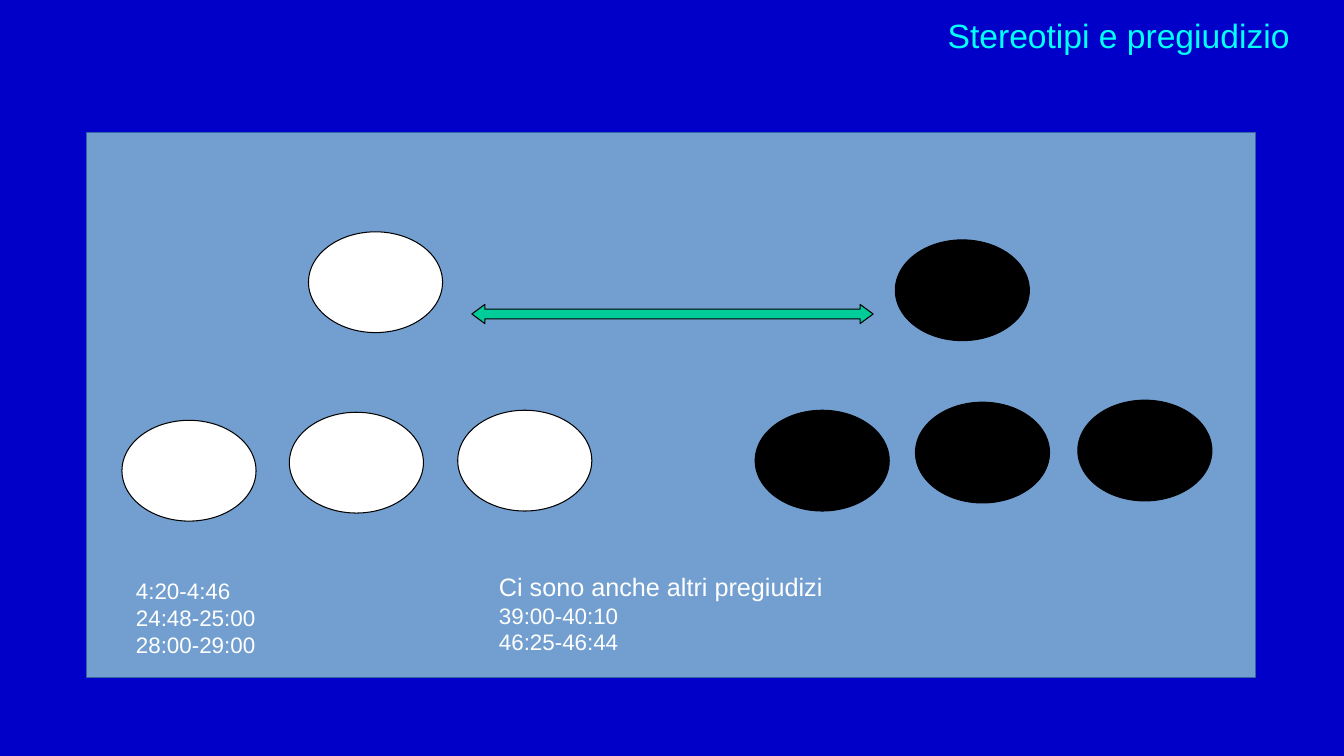
from dataclasses import dataclass

from pptx import Presentation
from pptx import util as u
from pptx.dml import color
from pptx.enum import shapes, text


@dataclass(frozen=True)
class Theme:
    """Colours, font and type sizes of the slide."""
    background: str = "0000C8"
    heading: str = "00FFFF"
    panel: str = "729FCF"
    panel_edge: str = "3465A4"
    arrow: str = "00CC99"
    white: str = "FFFFFF"
    black: str = "000000"
    font: str = "Arial"
    title_size: int = 24
    lead_size: int = 18
    note_size: int = 16


THEME = Theme()
PANEL = (0.86, 1.31, 11.59, 5.41)
PERSON = (1.33, 1)


def rgb(value):
    """Turn a hex string into a colour."""
    return color.RGBColor.from_string(value)


def add_figure(slide, kind, box, fill, edge=THEME.black):
    """Draw one filled, thinly outlined preset shape."""
    figure = slide.shapes.add_shape(kind, *map(u.Inches, box))
    figure.shadow.inherit = False
    figure.fill.solid()
    figure.fill.fore_color.rgb = rgb(fill)
    figure.line.color.rgb = rgb(edge)
    figure.line.width = u.Pt(0.75)
    return figure


def add_run(paragraph, words, size, ink):
    """Append one formatted run to a paragraph."""
    run = paragraph.add_run()
    run.text = words
    run.font.name = THEME.font
    run.font.size = u.Pt(size)
    run.font.color.rgb = rgb(ink)


def place_title(slide, box, words):
    """Move the title placeholder into its box, aligned right."""
    title = slide.shapes.title
    title.left, title.top, title.width, title.height = map(u.Inches, box)
    frame = title.text_frame
    frame.auto_size = text.MSO_AUTO_SIZE.NONE
    frame.vertical_anchor = text.MSO_ANCHOR.MIDDLE
    frame.paragraphs[0].alignment = text.PP_ALIGN.RIGHT
    add_run(frame.paragraphs[0], words, THEME.title_size, THEME.heading)


def add_group(slide, box, people, fill):
    """Draw the members of one social group at offsets within the box."""
    left, top = box[:2]
    for across, down in people:
        place = (left + across, top + down, *PERSON)
        add_figure(slide, shapes.MSO_SHAPE.OVAL, place, fill)


def add_relation(slide, box):
    """Draw the double arrow between the two groups."""
    arrow = add_figure(slide, shapes.MSO_SHAPE.LEFT_RIGHT_ARROW, box, THEME.arrow)
    arrow.adjustments[0] = 0.5
    arrow.adjustments[1] = 0.68


def add_notes(slide, box, lines):
    """Write a block of (words, size) lines."""
    frame = slide.shapes.add_textbox(*map(u.Inches, box)).text_frame
    frame.word_wrap = True
    for number, (words, size) in enumerate(lines):
        paragraph = frame.add_paragraph() if number else frame.paragraphs[0]
        add_run(paragraph, words, size, THEME.white)


def add_panel(slide, box):
    """Lay out the panel with both groups, the arrow and the timings."""
    left, top = box[:2]
    add_figure(slide, shapes.MSO_SHAPE.RECTANGLE, box, THEME.panel, THEME.panel_edge)
    white_people = [(2.2, 0.99), (0.35, 2.86), (2.01, 2.78), (3.68, 2.76)]
    black_people = [(8.02, 1.07), (6.63, 2.76), (8.22, 2.68), (9.83, 2.66)]
    add_group(slide, box, white_people, THEME.white)
    add_group(slide, box, black_people, THEME.black)
    add_relation(slide, (left + 3.82, top + 1.71, 3.98, 0.19))
    timings = ["4:20-4:46", "24:48-25:00", "28:00-29:00"]
    add_notes(slide, (left + 0.39, top + 4.37, 7.49, 0.9),
              [(timing, THEME.note_size) for timing in timings])
    add_notes(slide, (left + 3.99, top + 4.31, 7.49, 1.2),
              [("Ci sono anche altri pregiudizi", THEME.lead_size),
               ("39:00-40:10", THEME.note_size),
               ("46:25-46:44", THEME.note_size)])


def main():
    """Build and save the slide."""
    deck = Presentation()
    deck.slide_width, deck.slide_height = u.Inches(13.33), u.Inches(7.5)
    slide = deck.slides.add_slide(deck.slide_layouts.get_by_name("Title Only"))
    slide.background.fill.solid()
    slide.background.fill.fore_color.rgb = rgb(THEME.background)
    place_title(slide, (1.77, 0, 11.12, 0.7), "Stereotipi e pregiudizio")
    add_panel(slide, PANEL)
    deck.save("out.pptx")


if __name__ == "__main__":
    main()
